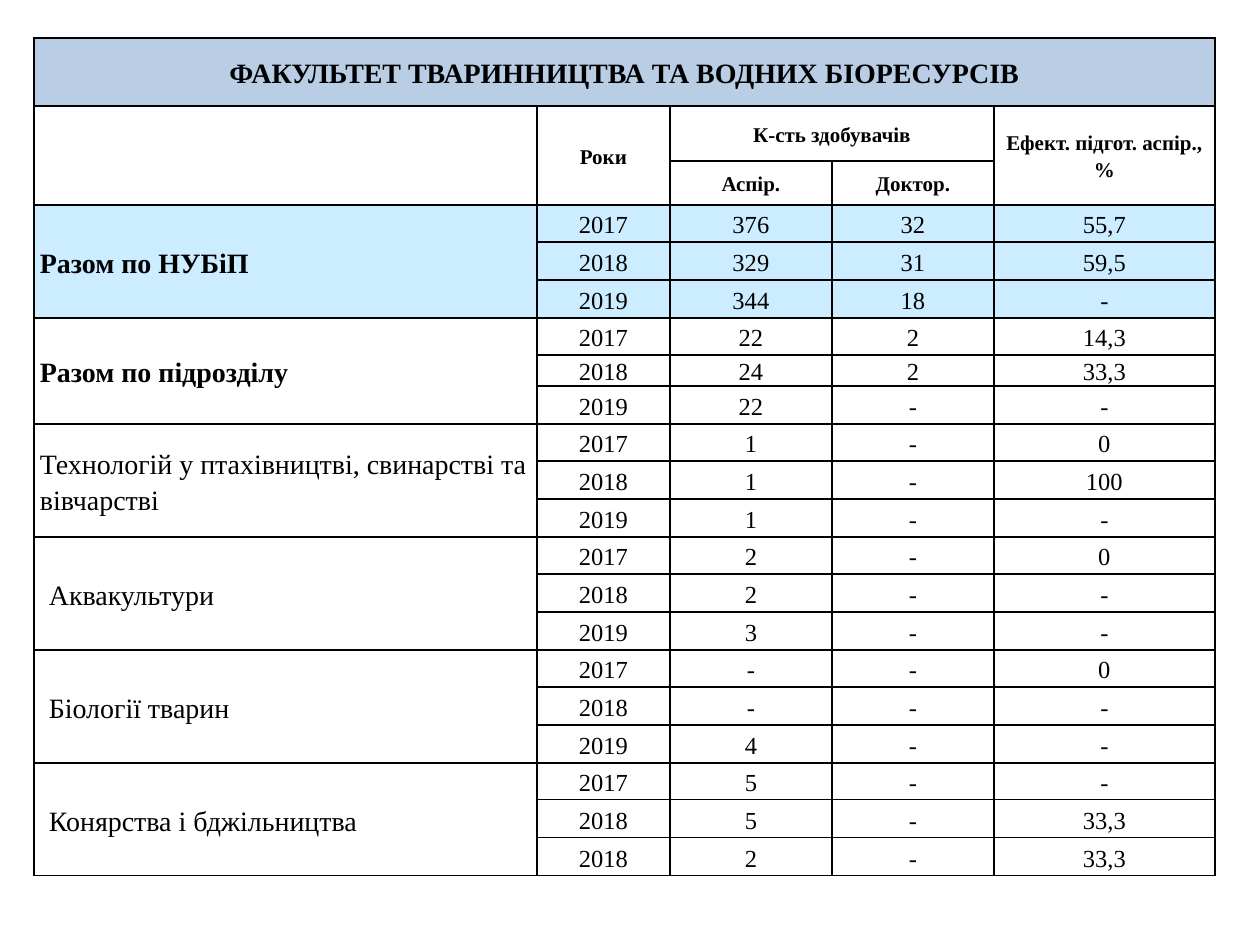
from dataclasses import dataclass

from lxml.etree import SubElement
from pptx import Presentation
from pptx.dml.color import RGBColor
from pptx.enum.text import MSO_ANCHOR, PP_ALIGN
from pptx.oxml.ns import qn
from pptx.table import Table, _Cell as Cell
from pptx.util import Pt

PX = 914400 // 126
FONT = "Times New Roman"
BLACK = RGBColor(0x00, 0x00, 0x00)
TITLE_BLUE = RGBColor(0xB9, 0xCD, 0xE5)
TOTAL_BLUE = RGBColor(0xCC, 0xEC, 0xFF)

COLUMN_WIDTHS = (503, 133, 162, 162, 221)
HEADER_HEIGHTS = (68, 55, 44)
GROUP_HEIGHTS = (37, 38, 38)
SUBTOTAL_HEIGHTS = (37, 20, 38)


@dataclass(frozen=True)
class Group:
    name: str
    rows: tuple[str, ...]
    bold: bool = False
    indent: int = 0
    fill: RGBColor | None = None
    heights: tuple[int, ...] = GROUP_HEIGHTS


@dataclass(frozen=True)
class Header:
    text: str
    row: int
    col: int
    last_row: int
    last_col: int
    size: int = 12
    fill: RGBColor | None = None


HEADERS = (
    Header("ФАКУЛЬТЕТ ТВАРИННИЦТВА ТА ВОДНИХ БІОРЕСУРСІВ", 0, 0, 0, 4, 16, TITLE_BLUE),
    Header("", 1, 0, 2, 0),
    Header("Роки", 1, 1, 2, 1),
    Header("К-сть здобувачів", 1, 2, 1, 3),
    Header("Ефект. підгот. аспір., %", 1, 4, 2, 4),
    Header("Аспір.", 2, 2, 2, 2),
    Header("Доктор.", 2, 3, 2, 3),
)

# Each row: year, postgraduates, doctoral students, efficiency
GROUPS = (
    Group("Разом по НУБіП", ("2017 376 32 55,7", "2018 329 31 59,5", "2019 344 18 -"),
          bold=True, fill=TOTAL_BLUE),
    Group("Разом по підрозділу", ("2017 22 2 14,3", "2018 24 2 33,3", "2019 22 - -"),
          bold=True, heights=SUBTOTAL_HEIGHTS),
    Group("Технологій у птахівництві, свинарстві та вівчарстві",
          ("2017 1 - 0", "2018 1 - 100", "2019 1 - -")),
    Group("Аквакультури", ("2017 2 - 0", "2018 2 - -", "2019 3 - -"), indent=9),
    Group("Біології тварин", ("2017 - - 0", "2018 - - -", "2019 4 - -"), indent=9),
    Group("Конярства і бджільництва", ("2017 5 - -", "2018 5 - 33,3", "2018 2 - 33,3"),
          indent=9),
)


def style_cell(cell: Cell, fill: RGBColor | None = None) -> None:
    """Set the margins, anchor, thin black borders and fill."""
    cell.margin_left = cell.margin_right = 6 * PX
    cell.margin_top = cell.margin_bottom = 0
    cell.vertical_anchor = MSO_ANCHOR.MIDDLE
    for side in ("a:lnL", "a:lnR", "a:lnT", "a:lnB"):
        ln = SubElement(cell._tc.get_or_add_tcPr(), qn(side), w=str(Pt(1)))
        SubElement(SubElement(ln, qn("a:solidFill")), qn("a:srgbClr"), val=str(BLACK))
    if fill is None:
        cell.fill.background()
    else:
        cell.fill.solid()
        cell.fill.fore_color.rgb = fill


def write(cell: Cell, text: str, size: int, bold: bool = False,
          align: PP_ALIGN = PP_ALIGN.CENTER, indent: int = 0) -> None:
    p = cell.text_frame.paragraphs[0]
    p.text = text
    p.alignment = align
    p.line_spacing = 1.15
    if indent:
        p._p.get_or_add_pPr().set("indent", str(indent * PX))
    for r in p.runs:
        r.font.name = FONT
        r.font.size = Pt(size)
        r.font.bold = bold
        r.font.color.rgb = BLACK


def fill_headers(table: Table) -> None:
    for h in HEADERS:
        cell, last = table.cell(h.row, h.col), table.cell(h.last_row, h.last_col)
        for row in range(h.row, h.last_row + 1):
            for col in range(h.col, h.last_col + 1):
                style_cell(table.cell(row, col), h.fill)
        if (h.row, h.col) != (h.last_row, h.last_col):
            cell.merge(last)
        write(cell, h.text, h.size, bold=True)


def fill_group(table: Table, top: int, group: Group) -> None:
    for row, line in enumerate(group.rows, top):
        style_cell(table.cell(row, 0), group.fill)
        for col, value in enumerate(line.split(), 1):
            cell = table.cell(row, col)
            style_cell(cell, group.fill)
            write(cell, value, 14)
    name = table.cell(top, 0)
    name.merge(table.cell(top + len(group.rows) - 1, 0))
    write(name, group.name, 16, group.bold, PP_ALIGN.LEFT, group.indent)


def main() -> None:
    prs = Presentation()
    prs.slide_width, prs.slide_height = 1260 * PX, 945 * PX
    s = prs.slides.add_slide(prs.slide_layouts[6])

    heights = [*HEADER_HEIGHTS, *(h for g in GROUPS for h in g.heights)]
    table = s.shapes.add_table(len(heights), len(COLUMN_WIDTHS), 34 * PX, 38 * PX,
                               sum(COLUMN_WIDTHS) * PX, sum(heights) * PX).table
    table.first_row = table.horz_banding = False
    for column, width in zip(table.columns, COLUMN_WIDTHS):
        column.width = width * PX
    for row, height in zip(table.rows, heights):
        row.height = height * PX

    fill_headers(table)
    top = len(HEADER_HEIGHTS)
    for group in GROUPS:
        fill_group(table, top, group)
        top += len(group.rows)
    prs.save("out.pptx")


if __name__ == "__main__":
    main()
